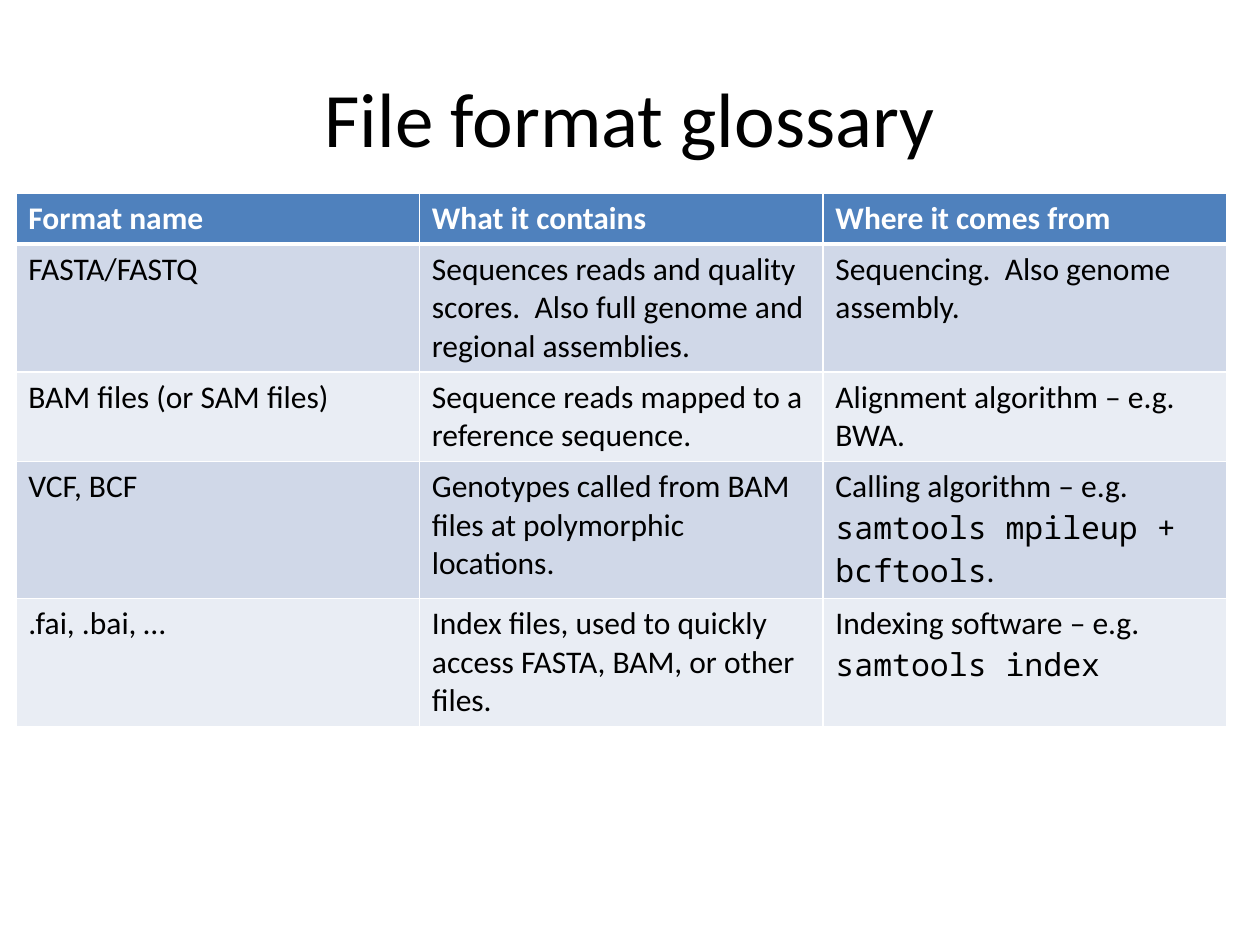
from lxml.etree import SubElement
from pptx import Presentation
from pptx.dml.color import RGBColor
from pptx.enum.text import MSO_ANCHOR, PP_ALIGN
from pptx.oxml.ns import qn
from pptx.util import Pt

MONO = "Noto Sans Mono"
ROWS = [
    ["Format name", "What it contains", "Where it comes from"],
    ["FASTA/FASTQ",
     "Sequences reads and quality scores.  Also full genome and regional assemblies.",
     "Sequencing.  Also genome assembly."],
    ["BAM files (or SAM files)",
     "Sequence reads mapped to a reference sequence.",
     "Alignment algorithm – e.g. BWA."],
    ["VCF, BCF",
     "Genotypes called from BAM files at polymorphic locations.",
     ["Calling algorithm – e.g. ", ("samtools mpileup + bcftools", MONO), "."]],
    [".fai, .bai, …",
     "Index files, used to quickly access FASTA, BAM, or other files.",
     ["Indexing software – e.g. ", ("samtools index", MONO)]],
]


def color(code):
    return RGBColor.from_string(code)


class Deck:
    """Holds the style and the current slide, and adds elements to it."""

    font, ink, light = "Calibri", "000000", "FFFFFF"
    head, bands = "4F81BD", ("E9EDF4", "D0D8E8")

    def __init__(self):
        self.file = Presentation()
        self.file.slide_width, self.file.slide_height = Pt(720), Pt(540)
        self.slide = self.file.slides.add_slide(self.file.slide_layouts[5])

    def text(self, para, runs, size, ink, bold=False):
        for part in [runs] if isinstance(runs, str) else runs:
            words, face = (part, self.font) if isinstance(part, str) else part
            run = para.add_run()
            run.text = words
            run.font.name, run.font.size, run.font.bold = face, Pt(size), bold
            run.font.color.rgb = color(ink)

    def title(self, words, left, top, width, height):
        box = self.slide.shapes.title
        box.left, box.top, box.width, box.height = map(Pt, (left, top, width, height))
        box.text_frame.vertical_anchor = MSO_ANCHOR.MIDDLE
        para = box.text_frame.paragraphs[0]
        para.alignment = PP_ALIGN.CENTER
        self.text(para, words, 44, self.ink)

    def border(self, cell, widths):
        props = cell._tc.get_or_add_tcPr()
        for side, width in widths.items():
            line = SubElement(props, qn(f"a:ln{side}"), w=str(Pt(width)))
            fill = SubElement(line, qn("a:solidFill"))
            SubElement(fill, qn("a:srgbClr"), val=self.light)

    def table(self, rows, left, top, width, height):
        frame = self.slide.shapes.add_table(
            len(rows), len(rows[0]), Pt(left), Pt(top), Pt(width), Pt(height))
        for i, row in enumerate(rows):
            first = i == 0
            for j, runs in enumerate(row):
                cell = frame.table.cell(i, j)
                self.border(cell, {"L": 1, "R": 1, "T": 3 if i == 1 else 1,
                                   "B": 3 if first else 1})
                cell.fill.solid()
                cell.fill.fore_color.rgb = color(self.head if first else self.bands[i % 2])
                self.text(cell.text_frame.paragraphs[0], runs, 18,
                          self.light if first else self.ink, first)


def main():
    deck = Deck()
    deck.title("File format glossary", 36, 21.6, 648, 90)
    deck.table(ROWS, 9, 110.2, 691.8, 146)
    deck.file.save("out.pptx")


if __name__ == "__main__":
    main()
